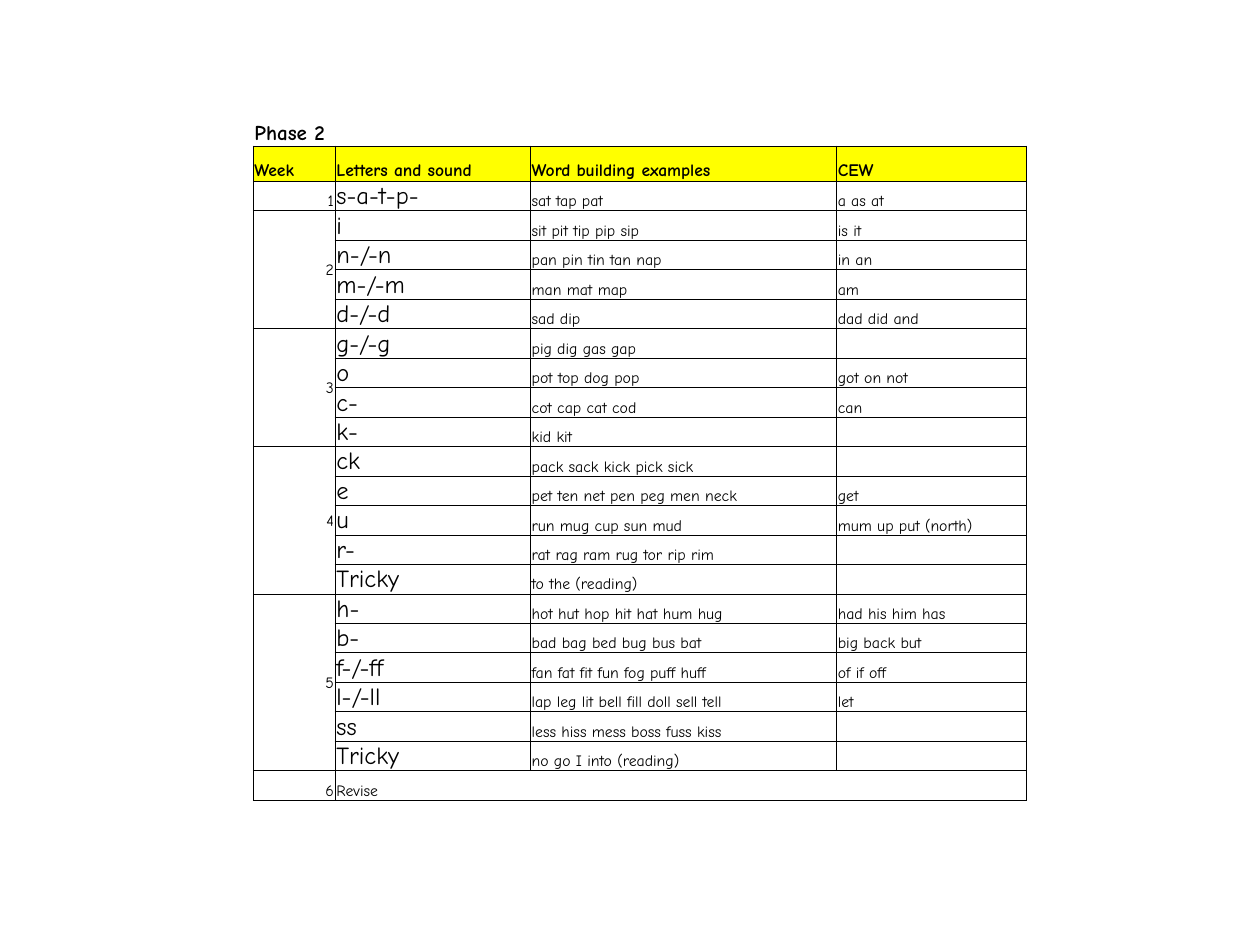
from lxml.etree import SubElement
from pptx import Presentation
from pptx.dml.color import RGBColor
from pptx.enum.text import MSO_ANCHOR, PP_ALIGN
from pptx.oxml.ns import qn
from pptx.util import Inches, Pt

HEADINGS = ["Week", "Letters and sound", "Word building examples", "CEW"]

# Each week holds its rows of letters, example words and common exception words
WEEKS = {
    "1": [("s-a-t-p-", "sat tap pat", "a as at")],
    "2": [
        ("i", "sit pit tip pip sip", "is it"),
        ("n-/-n", "pan pin tin tan nap", "in an"),
        ("m-/-m", "man mat map", "am"),
        ("d-/-d", "sad dip", "dad did and"),
    ],
    "3": [
        ("g-/-g", "pig dig gas gap", ""),
        ("o", "pot top dog pop", "got on not"),
        ("c-", "cot cap cat cod", "can"),
        ("k-", "kid kit", ""),
    ],
    "4": [
        ("ck", "pack sack kick pick sick", ""),
        ("e", "pet ten net pen peg men neck", "get"),
        ("u", "run mug cup sun mud", "mum up put (north)"),
        ("r-", "rat rag ram rug tor rip rim", ""),
        ("Tricky", "to the (reading)", ""),
    ],
    "5": [
        ("h-", "hot hut hop hit hat hum hug", "had his him has"),
        ("b-", "bad bag bed bug bus bat", "big back but"),
        ("f-/-ff", "fan fat fit fun fog puff huff", "of if off"),
        ("l-/-ll", "lap leg lit bell fill doll sell tell", "let"),
        ("ss", "less hiss mess boss fuss kiss", ""),
        ("Tricky", "no go I into (reading)", ""),
    ],
}


def color(value):
    return RGBColor.from_string(value)


class PhonicsPage:
    font = "Comic Neue"
    ink = "000000"
    highlight = "FFFF00"
    line_width = Pt(0.5)

    def __init__(self, deck):
        self.page = deck.slides.add_slide(deck.slide_layouts[6])

    def table(self, left, top, widths, heights):
        frame = self.page.shapes.add_table(
            len(heights), len(widths), left, top, sum(widths), sum(heights))
        table = frame.table
        table.first_row = table.horz_banding = False
        for column, width in zip(table.columns, widths):
            column.width = width
        for row, height in zip(table.rows, heights):
            row.height = height
        # Only the bottom edge shows on the caption row
        for number, row in enumerate(table.rows):
            for cell in row.cells:
                self.borders(cell, "B" if number == 0 else "LRTB")
                cell.fill.background()
                self.cell_text(cell, "")
        return table

    def borders(self, cell, visible):
        properties = cell._tc.get_or_add_tcPr()
        for side in "LRTB":
            line = SubElement(properties, qn(f"a:ln{side}"), w=str(self.line_width))
            if side in visible:
                fill = SubElement(line, qn("a:solidFill"))
                SubElement(fill, qn("a:srgbClr"), val=self.ink)
            else:
                SubElement(line, qn("a:noFill"))

    def cell_text(self, cell, text, size=9, bold=False, align=PP_ALIGN.LEFT,
                  anchor=MSO_ANCHOR.BOTTOM, fill=None):
        cell.margin_left = cell.margin_right = cell.margin_top = Inches(0.01)
        cell.margin_bottom = 0
        cell.vertical_anchor = anchor
        if fill:
            cell.fill.solid()
            cell.fill.fore_color.rgb = color(fill)
        para = cell.text_frame.paragraphs[0]
        para.alignment = align
        if text:
            span = para.add_run()
            span.text = text
            span.font.name = self.font
            span.font.size = Pt(size)
            span.font.bold = bold
            span.font.color.rgb = color(self.ink)
        elif para._p.find(qn("a:endParaRPr")) is None:
            # A small end mark keeps empty cells from stretching their row
            SubElement(para._p, qn("a:endParaRPr"), sz=str(size * 100))


def main():
    deck = Presentation()
    deck.slide_width, deck.slide_height = Inches(10), Inches(7.5)
    page = PhonicsPage(deck)

    # Grid: caption, headings, the sound rows and the revision row
    body_rows = sum(len(sounds) for sounds in WEEKS.values()) + 1
    row_height = Inches(4.91) // body_rows
    widths = [Inches(width) for width in (0.65, 1.55, 2.43, 1.51)]
    heights = [Inches(0.32), Inches(0.28)] + [row_height] * body_rows
    table = page.table(Inches(2.01), Inches(0.84), widths, heights)

    # Caption and headings
    table.cell(0, 0).merge(table.cell(0, 1))
    page.cell_text(table.cell(0, 0), "Phase 2", size=12, bold=True)
    for column, heading in enumerate(HEADINGS):
        page.cell_text(table.cell(1, column), heading, size=10, bold=True,
                       fill=page.highlight)

    # Weeks of sounds
    row = 2
    for week, sounds in WEEKS.items():
        first = table.cell(row, 0)
        if len(sounds) > 1:
            first.merge(table.cell(row + len(sounds) - 1, 0))
        anchor = MSO_ANCHOR.MIDDLE if len(sounds) > 1 else MSO_ANCHOR.BOTTOM
        page.cell_text(first, week, align=PP_ALIGN.RIGHT, anchor=anchor)
        for letters, examples, exceptions in sounds:
            page.cell_text(table.cell(row, 1), letters, size=14)
            page.cell_text(table.cell(row, 2), examples)
            page.cell_text(table.cell(row, 3), exceptions)
            row += 1

    # Revision week
    table.cell(row, 1).merge(table.cell(row, 3))
    page.cell_text(table.cell(row, 0), "6", align=PP_ALIGN.RIGHT)
    page.cell_text(table.cell(row, 1), "Revise")

    deck.save("out.pptx")


if __name__ == "__main__":
    main()
